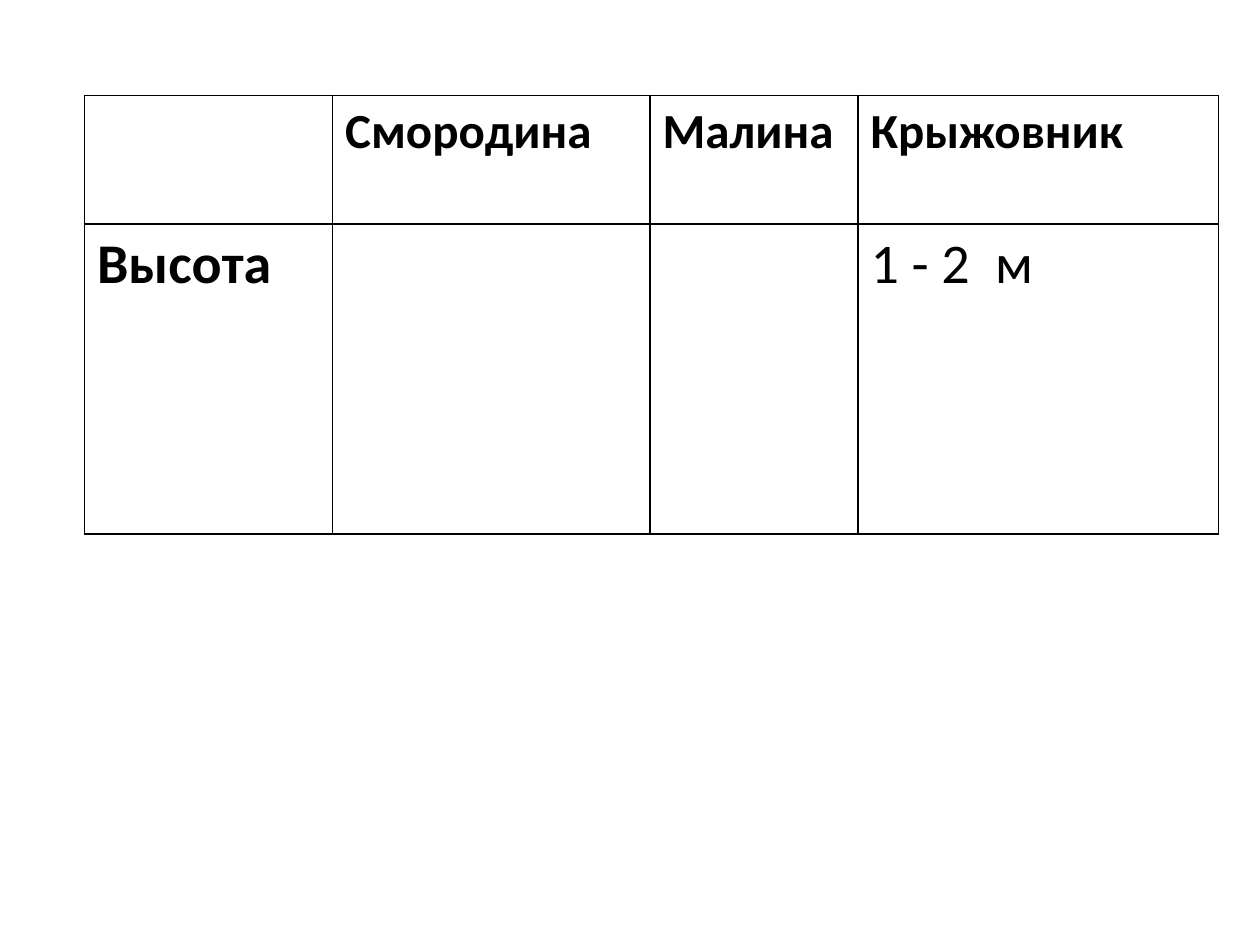
from lxml import etree
from pptx import Presentation
from pptx.dml.color import RGBColor
from pptx.oxml.ns import qn
from pptx.util import Inches, Pt

FONT = "Calibri"
BLACK = "000000"
COLUMN_WIDTHS = [1.97, 2.52, 1.65, 2.86]
ROW_HEIGHTS = [1.02, 2.46]
HEADER_SIZE, BODY_SIZE = 28, 32
ROWS = [
    ["", "Смородина", "Малина", "Крыжовник"],
    ["Высота", "", "", "1 - 2  м"],
]


def rgb(value):
    return RGBColor.from_string(value)


def write_text(tf, text, size=28, bold=False, color=BLACK):
    r = tf.paragraphs[0].add_run()
    r.text = text
    r.font.name = FONT
    r.font.size = Pt(size)
    r.font.bold = bold
    r.font.color.rgb = rgb(color)


def set_borders(cell, color=BLACK, width=1):
    """Draw all four cell edges; call before filling, as edges come first in tcPr."""
    tc_pr = cell._tc.get_or_add_tcPr()
    for edge in ("a:lnL", "a:lnR", "a:lnT", "a:lnB"):
        ln = etree.SubElement(tc_pr, qn(edge), w=str(Pt(width)))
        fill = etree.SubElement(ln, qn("a:solidFill"))
        etree.SubElement(fill, qn("a:srgbClr"), val=color)


def add_berry_table(s, left, top, width, height):
    table = s.shapes.add_table(len(ROWS), len(COLUMN_WIDTHS), Inches(left),
                               Inches(top), Inches(width), Inches(height)).table
    table.first_row = table.horz_banding = False
    for column, share in zip(table.columns, COLUMN_WIDTHS):
        column.width = Inches(width * share / sum(COLUMN_WIDTHS))
    for row, share in zip(table.rows, ROW_HEIGHTS):
        row.height = Inches(height * share / sum(ROW_HEIGHTS))
    for i, texts in enumerate(ROWS):
        for j, text in enumerate(texts):
            cell = table.cell(i, j)
            set_borders(cell)
            cell.fill.background()
            if text:
                write_text(cell.text_frame, text, bold=i == 0 or j == 0,
                           size=HEADER_SIZE if i == 0 else BODY_SIZE)


def main():
    prs = Presentation()
    prs.slide_width, prs.slide_height = Inches(10), Inches(7.5)
    s = prs.slides.add_slide(prs.slide_layouts[6])
    add_berry_table(s, 0.67, 0.76, 9, 3.48)
    prs.save("out.pptx")


if __name__ == "__main__":
    main()
